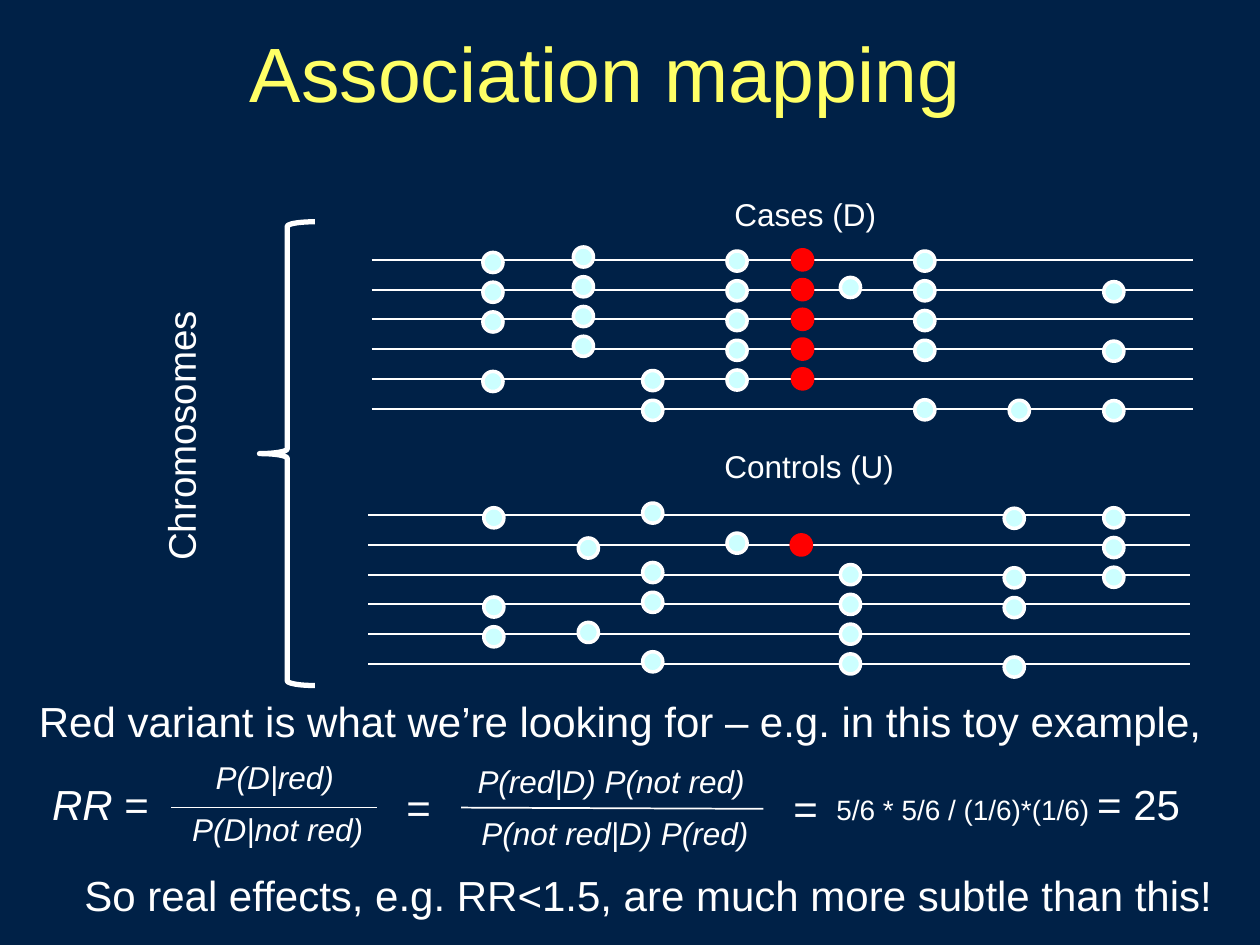
from lxml import etree
from pptx import Presentation
from pptx.dml.color import RGBColor
from pptx.enum import shapes, text
from pptx.oxml.ns import qn
from pptx.util import Pt

THEME = dict(
    font="Arial", back="002147", ink="FFFFFF", title="FFFF66",
    dot="CCFFFF", red="FF0000",
    huge=44, body=24, side=22, label=18, small=16,
)
ROWS, PITCH, SPAN, DOT = 6, 17, 469.4, 11.5

# Variant columns: centre x, offset from the line, rows, colour
CASES = [
    (281.7, 1.5, (0, 1, 2, 4), "dot"),
    (333.4, -1.6, (0, 1, 2, 3), "dot"),
    (373, 1, (4, 5), "dot"),
    (421.2, 0.7, (0, 1, 2, 3, 4), "dot"),
    (458.6, 0, (0, 1, 2, 3, 4), "red"),
    (486, -1.2, (1,), "dot"),
    (528.5, 0.7, (0, 1, 2, 3, 5), "dot"),
    (582.5, 1, (5,), "dot"),
    (636.5, 1.2, (1, 3, 5), "dot"),
]
CONTROLS = [
    (282.2, 1.5, (0, 3, 4), "dot"),
    (336.2, 1.8, (1,), "dot"),
    (336.2, -1, (4,), "dot"),
    (373, -1.2, (0, 2, 3, 5), "dot"),
    (421.2, -1, (1,), "dot"),
    (457.9, 0, (1,), "red"),
    (486, 0, (2, 3, 4, 5), "dot"),
    (579.6, 1.8, (0, 2, 3, 5), "dot"),
    (636.5, 1.5, (0, 1, 2), "dot"),
]
# Groups: left end and height of the first line, variants
GROUPS = [(212.4, 148.5, CASES), (210.4, 294.4, CONTROLS)]

# Fraction bars: start and end
BARS = [(97.9, 461.5, 215.3, 461.5), (263.5, 461.5, 436.3, 462.2)]

# Texts: box, runs (words, size, italic), alignment, wrap
TEXTS = [
    ((412.6, 108, 95.8, 43.2), [("Cases (D)", "label", False)], "LEFT", False),
    ((406.8, 252, 111.6, 28.8), [("Controls (U)", "label", False)], "LEFT", False),
    ((15.1, 393.8, 704.9, 36),
     [("Red variant is what we’re looking for – e.g. in this toy example,",
       "body", False)], "LEFT", True),
    ((100.8, 459.4, 113.8, 28.8), [("P(D|not red)", "label", True)], "RIGHT", False),
    ((114.5, 429.8, 83.5, 28.8), [("P(D|red)", "label", True)], "RIGHT", False),
    ((265, 461.5, 169.9, 28.8), [("P(not red|D) P(red)", "label", True)], "RIGHT", False),
    ((262.8, 432, 169.9, 28.8), [("P(red|D) P(not red)", "label", True)], "RIGHT", False),
    ((20.2, 441.4, 72, 36), [("RR", "body", True), (" =", "body", False)], "RIGHT", False),
    ((224.6, 442.8, 28.8, 36), [("= ", "body", False)], "RIGHT", False),
    ((445.7, 443.5, 28.8, 36), [("= ", "body", False)], "RIGHT", False),
    ((470.9, 441.4, 213.1, 36),
     [("5/6 * 5/6 / (1/6)*(1/6) ", "small", False), ("= 25", "body", False)],
     "LEFT", False),
    ((18, 493.2, 704.9, 36),
     [("So real effects, e.g. RR<1.5, are much more subtle than this!",
       "body", False)], "CENTER", True),
]

deck = Presentation()
deck.slide_width, deck.slide_height = Pt(720), Pt(540)
slide = deck.slides.add_slide(deck.slide_layouts[6])


def tint(name):
    return RGBColor.from_string(THEME[name])


def apply(item, **vals):
    for key, val in vals.items():
        setattr(item, key, val)


def add_line(x1, y1, x2, y2, width):
    line = slide.shapes.add_connector(
        shapes.MSO_CONNECTOR.STRAIGHT, Pt(x1), Pt(y1), Pt(x2), Pt(y2))
    line.line.color.rgb = tint("ink")
    line.line.width = Pt(width)
    etree.SubElement(line._element.spPr, qn("a:effectLst"))


def add_form(kind, box, fill, edge, width):
    form = slide.shapes.add_shape(kind, *map(Pt, box))
    form.shadow.inherit = False
    if fill:
        form.fill.solid()
        form.fill.fore_color.rgb = tint(fill)
    else:
        form.fill.background()
    form.line.color.rgb = tint(edge)
    form.line.width = Pt(width)


def add_text(box, runs, align, wrap, color="ink"):
    area = slide.shapes.add_textbox(*map(Pt, box))
    apply(area.text_frame, word_wrap=wrap,
          auto_size=text.MSO_AUTO_SIZE.SHAPE_TO_FIT_TEXT)
    para = area.text_frame.paragraphs[0]
    para.alignment = getattr(text.PP_ALIGN, align)
    for words, size, slant in runs:
        run = para.add_run()
        run.text = words
        apply(run.font, name=THEME["font"], size=Pt(THEME[size]), italic=slant)
        run.font.color.rgb = tint(color)
    return area


# Background
slide.background.fill.solid()
slide.background.fill.fore_color.rgb = tint("back")

# Chromosomes and their variants
for left, top, cols in GROUPS:
    for row in range(ROWS):
        y = top + row * PITCH
        add_line(left, y, left + SPAN, y, 1.25)
    for x, shift, rows, color in cols:
        for row in rows:
            y = top + row * PITCH + shift
            add_form(shapes.MSO_SHAPE.OVAL, (x - DOT / 2, y - DOT / 2, DOT, DOT),
                     color, "red" if color == "red" else "ink", 2)

# Brace with its upright label
add_form(shapes.MSO_SHAPE.LEFT_BRACE, (148.3, 126.7, 31.7, 265), None, "ink", 3)
side = add_text((23.8, 233.3, 159.1, 33.8),
                [("Chromosomes", "side", False)], "RIGHT", False)
side.rotation = 270

# Title
head = add_text((71.3, 19.4, 549.4, 51.8),
                [("Association mapping", "huge", False)], "CENTER", True, "title")
apply(head.text_frame, auto_size=text.MSO_AUTO_SIZE.NONE,
      vertical_anchor=text.MSO_ANCHOR.BOTTOM)

# Labels, sentences and the risk ratio
for item in TEXTS:
    add_text(*item)
for bar in BARS:
    add_line(*bar, 1)

deck.save("out.pptx")
